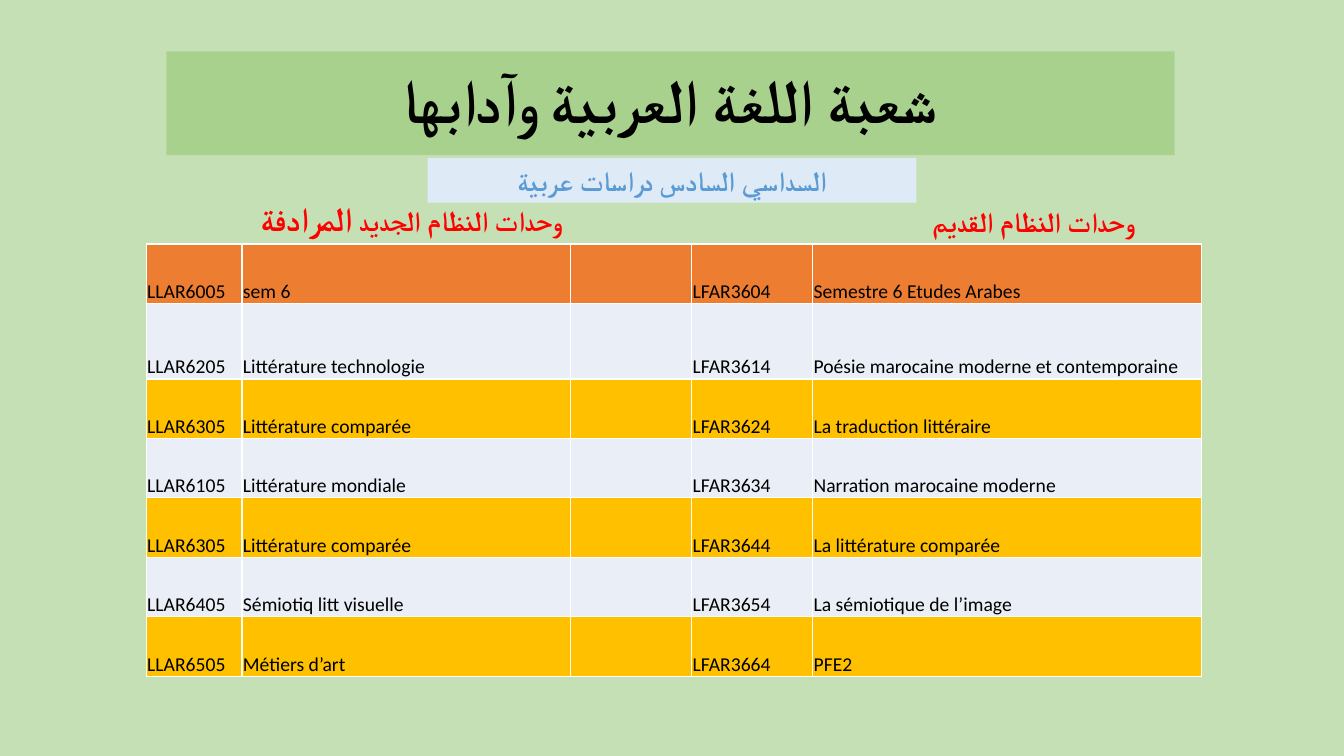
from lxml import etree
from pptx import Presentation
from pptx.dml.color import RGBColor
from pptx.enum.shapes import MSO_SHAPE
from pptx.enum.text import MSO_ANCHOR, MSO_AUTO_SIZE, PP_ALIGN
from pptx.oxml import parse_xml
from pptx.oxml.ns import nsdecls, qn
from pptx.util import Inches, Pt

RECT = MSO_SHAPE.RECTANGLE
LEFT, CENTER = PP_ALIGN.LEFT, PP_ALIGN.CENTER
TOP, MIDDLE, BOTTOM = MSO_ANCHOR.TOP, MSO_ANCHOR.MIDDLE, MSO_ANCHOR.BOTTOM
GROW = MSO_AUTO_SIZE.SHAPE_TO_FIT_TEXT
FONT = "Calibri"

# Content
TITLE = "شعبة اللغة العربية وآدابها"
TERM = "السداسي السادس دراسات عربية"
NEW_HEAD = [("وحدات النظام الجديد ", 20), ("المرادفة", 24)]
OLD_HEAD = "وحدات النظام القديم"
UNITS = [
    ("LLAR6005", "sem 6", "", "LFAR3604", "Semestre 6 Etudes Arabes"),
    ("LLAR6205", "Littérature technologie", "", "LFAR3614",
     "Poésie marocaine moderne et contemporaine"),
    ("LLAR6305", "Littérature comparée", "", "LFAR3624", "La traduction littéraire"),
    ("LLAR6105", "Littérature mondiale", "", "LFAR3634", "Narration marocaine moderne"),
    ("LLAR6305", "Littérature comparée", "", "LFAR3644", "La littérature comparée"),
    ("LLAR6405", "Sémiotiq litt visuelle", "", "LFAR3654", "La sémiotique de l’image"),
    ("LLAR6505", "Métiers d’art", "", "LFAR3664", "PFE2"),
]
WIDTHS = [0.95, 3.26, 1.2, 1.2, 3.86]
ROW, TALL = 0.59, 0.75
HEADER, PALE, GOLD = "ED7D31", "EAEFF7", "FFC000"


def paint(fill, color):
    fill.solid()
    fill.fore_color.rgb = RGBColor.from_string(color)


def write(frame, text, size=20, color="000000", bold=True, align=CENTER,
          rtl=False, line=None):
    """Fill the first paragraph; text is a string or (text, size) pairs."""
    para = frame.paragraphs[0]
    para.alignment = align
    if line:
        para.line_spacing = line
    if rtl:
        para._p.get_or_add_pPr().set("rtl", "1")
    for words, points in [(text, size)] if isinstance(text, str) else text:
        run = para.add_run()
        run.text = words
        font = run.font
        font.size, font.bold, font.name = Pt(points), bold, FONT
        font.color.rgb = RGBColor.from_string(color)
        etree.SubElement(run._r.get_or_add_rPr(), qn("a:cs"), typeface=FONT)


def add_box(box, text, fill=None, anchor=TOP, grow=True, **style):
    place = [Inches(n) for n in box]
    if fill:
        shape = slide.shapes.add_shape(RECT, *place)
        shape.shadow.inherit = False
        shape.line.fill.background()
        paint(shape.fill, fill)
    else:
        shape = slide.shapes.add_textbox(*place)
    frame = shape.text_frame
    frame.word_wrap = True
    frame.vertical_anchor = anchor
    if grow:
        frame.auto_size = GROW
    write(frame, text, **style)


def add_edges(cell, color="FFFFFF"):
    props = cell._tc.get_or_add_tcPr()
    for side in "LRTB":
        props.append(parse_xml(
            f'<a:ln{side} {nsdecls("a")} w="{Pt(1)}"><a:solidFill>'
            f'<a:srgbClr val="{color}"/></a:solidFill></a:ln{side}>'))


# Slide
deck = Presentation()
deck.slide_width, deck.slide_height = Inches(13.33), Inches(7.5)
slide = deck.slides.add_slide(deck.slide_layouts[6])
paint(slide.background.fill, "C5E0B4")

# Headings
add_box((1.65, 0.51, 10, 1.03), TITLE, fill="A9D18E", anchor=MIDDLE,
        grow=False, size=44, line=0.9)
add_box((1.85, 1.91, 4.46, 0.5), NEW_HEAD, color="FF0000")
add_box((8.02, 1.98, 4.46, 0.44), OLD_HEAD, color="FF0000")
add_box((4.24, 1.57, 4.85, 0.44), TERM, fill="DEEBF7", color="5B9BD5", rtl=True)

# Table of matching units
heights = [TALL if r == 1 else ROW for r in range(len(UNITS))]
grid = slide.shapes.add_table(
    len(UNITS), len(WIDTHS), Inches(1.45), Inches(2.42),
    Inches(sum(WIDTHS)), Inches(sum(heights))).table
grid.first_row = grid.horz_banding = False
for col, width in zip(grid.columns, WIDTHS):
    col.width = Inches(width)
for r, unit in enumerate(UNITS):
    grid.rows[r].height = Inches(heights[r])
    shade = HEADER if r == 0 else PALE if r % 2 else GOLD
    for c, text in enumerate(unit):
        cell = grid.cell(r, c)
        add_edges(cell)
        paint(cell.fill, shade)
        if text:
            cell.vertical_anchor = BOTTOM
            cell.margin_left = cell.margin_right = cell.margin_top = Inches(0.01)
            cell.margin_bottom = 0
            write(cell.text_frame, text, size=14, bold=False, align=LEFT)

deck.save("out.pptx")
